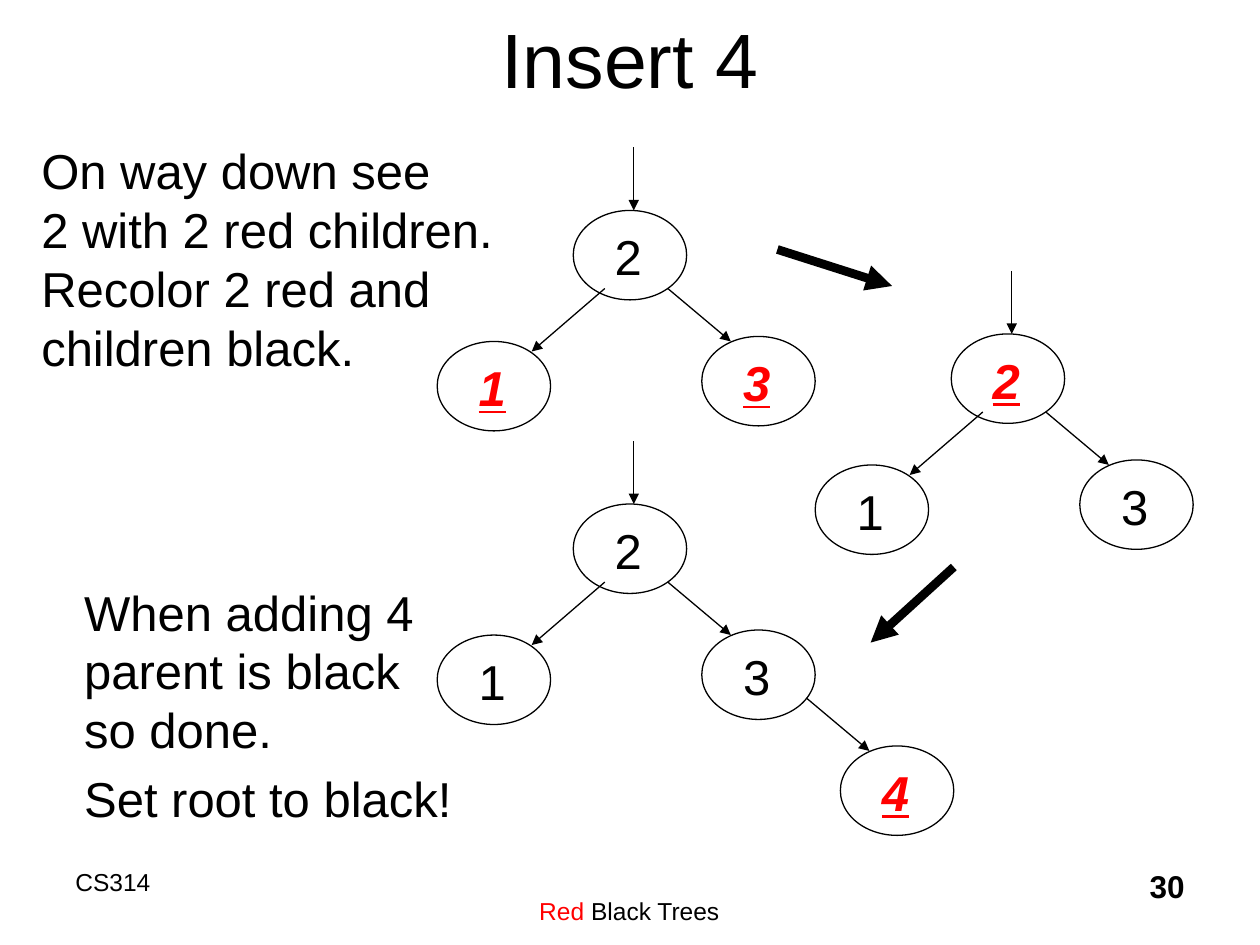
from lxml import etree
from pptx import Presentation
from pptx.dml.color import RGBColor
from pptx.enum.shapes import MSO_CONNECTOR, MSO_SHAPE
from pptx.enum.text import MSO_ANCHOR, PP_ALIGN
from pptx.oxml.ns import qn
from pptx.util import Inches, Pt

ELLIPSE, STRAIGHT = MSO_SHAPE.OVAL, MSO_CONNECTOR.STRAIGHT
LEFT, CENTER, RIGHT = PP_ALIGN.LEFT, PP_ALIGN.CENTER, PP_ALIGN.RIGHT
TOP, MIDDLE = MSO_ANCHOR.TOP, MSO_ANCHOR.MIDDLE
COLORS = {"black": RGBColor.from_string("000000"), "red": RGBColor.from_string("FF0000")}
FONT = "Arial"

presentation = Presentation()
presentation.slide_width, presentation.slide_height = Inches(10), Inches(7.5)
slide = presentation.slides.add_slide(presentation.slide_layouts[5])

# Grid of 10 columns by 7.5 rows
COLUMN = presentation.slide_width / 10
ROW = presentation.slide_height / 7.5


def add_text(shapes, box, paragraphs, size=28, color="black", align=LEFT, wrap=False, before=5.6):
    left, top, width, height = box
    shape = shapes.add_textbox(int(left * COLUMN), int(top * ROW),
                               int(width * COLUMN), int(height * ROW))
    text_frame = shape.text_frame
    text_frame.word_wrap = wrap
    text_frame.vertical_anchor = TOP
    text_frame.text = "\n".join(paragraphs)
    for paragraph in text_frame.paragraphs:
        paragraph.alignment = align
        paragraph.space_before = Pt(before)
        for run in paragraph.runs:
            run.font.name, run.font.size = FONT, Pt(size)
            run.font.color.rgb = COLORS[color]
    return text_frame


def add_arrow(start, end, weight=0.75):
    connector = slide.shapes.add_connector(
        STRAIGHT, int(start[0] * COLUMN), int(start[1] * ROW),
        int(end[0] * COLUMN), int(end[1] * ROW))
    connector.line.color.rgb = COLORS["black"]
    connector.line.width = Pt(weight)
    etree.SubElement(connector.line._get_or_add_ln(), qn("a:tailEnd"), type="triangle")
    etree.SubElement(connector._element.spPr, qn("a:effectLst"))


# Title
title = slide.shapes.title
title.left, title.top = int(0.75 * COLUMN), int(-0.17 * ROW)
title.width, title.height = int(8.5 * COLUMN), int(1.25 * ROW)
title.text_frame.text = "Insert 4"
title.text_frame.vertical_anchor = MIDDLE
title_paragraph = title.text_frame.paragraphs[0]
title_paragraph.alignment = CENTER
title_font = title_paragraph.runs[0].font
title_font.name, title_font.size = FONT, Pt(44)
title_font.color.rgb = COLORS["black"]

# Explanations
add_text(slide.shapes, (0.23, 1.07, 3.83, 2.46),
         ["On way down see\v2 with 2 red children.\vRecolor 2 red and\vchildren black."])
add_text(slide.shapes, (0.57, 4.57, 3.15, 2.08),
         ["When adding 4\vparent is black\vso done.", "Set root to black!"])

# Trees: root position, then the labels of the red nodes
TREES = [((4.55, 1.67), "13"), ((7.55, 2.65), "2"), ((4.55, 4), "4")]
# Offsets from the root
NODES = {"2": (0, 0), "1": (-1.08, 1.04), "3": (1.02, 1), "4": (2.12, 1.92)}
EDGES = {"2": ((0.48, -0.5), (0.48, 0)), "1": ((0.25, 0.62), (-0.33, 1.12)),
         "3": ((0.75, 0.62), (1.25, 1.04)), "4": ((1.85, 1.54), (2.35, 1.96))}

for (root_x, root_y), red_labels in TREES:
    labels = "2134" if "4" in red_labels else "213"
    for label in labels:
        x, y = root_x + NODES[label][0], root_y + NODES[label][1]
        is_red = label in red_labels
        node = slide.shapes.add_group_shape()
        ellipse = node.shapes.add_shape(ELLIPSE, int(x * COLUMN), int(y * ROW),
                                        int(0.9 * COLUMN), int(0.71 * ROW))
        ellipse.shadow.inherit = False
        ellipse.fill.background()
        ellipse.line.color.rgb = COLORS["black"]
        ellipse.line.width = Pt(0.75)
        text_frame = add_text(node.shapes, (x + 0.23, y + 0.08, 0.42, 0.57), [label],
                              color="red" if is_red else "black")
        font = text_frame.paragraphs[0].runs[0].font
        font.bold = font.italic = font.underline = is_red
    for label in labels:
        start, end = EDGES[label]
        add_arrow((root_x + start[0], root_y + start[1]), (root_x + end[0], root_y + end[1]))

# Thick arrows from one tree to the next
add_arrow((6.17, 1.98), (7.08, 2.27), weight=5)
add_arrow((7.57, 4.5), (6.91, 5.1), weight=5)

# Footer
add_text(slide.shapes, (0.5, 6.83, 2.5, 0.5), ["CS314"], size=14, wrap=True, before=0)
footer = add_text(slide.shapes, (3.08, 6.83, 3.83, 0.5), ["Red"], size=14, color="red",
                  align=CENTER, wrap=True, before=0)
footer.margin_top, footer.margin_bottom = int(0.33 * ROW), 0
footer_run = footer.paragraphs[0].add_run()
footer_run.text = " Black Trees"
footer_run.font.name, footer_run.font.size = FONT, Pt(14)
footer_run.font.color.rgb = COLORS["black"]
number = add_text(slide.shapes, (7.42, 6.83, 2.08, 0.5), ["30"], size=18,
                  align=RIGHT, wrap=True, before=0)
number.paragraphs[0].runs[0].font.bold = True

presentation.save("out.pptx")
